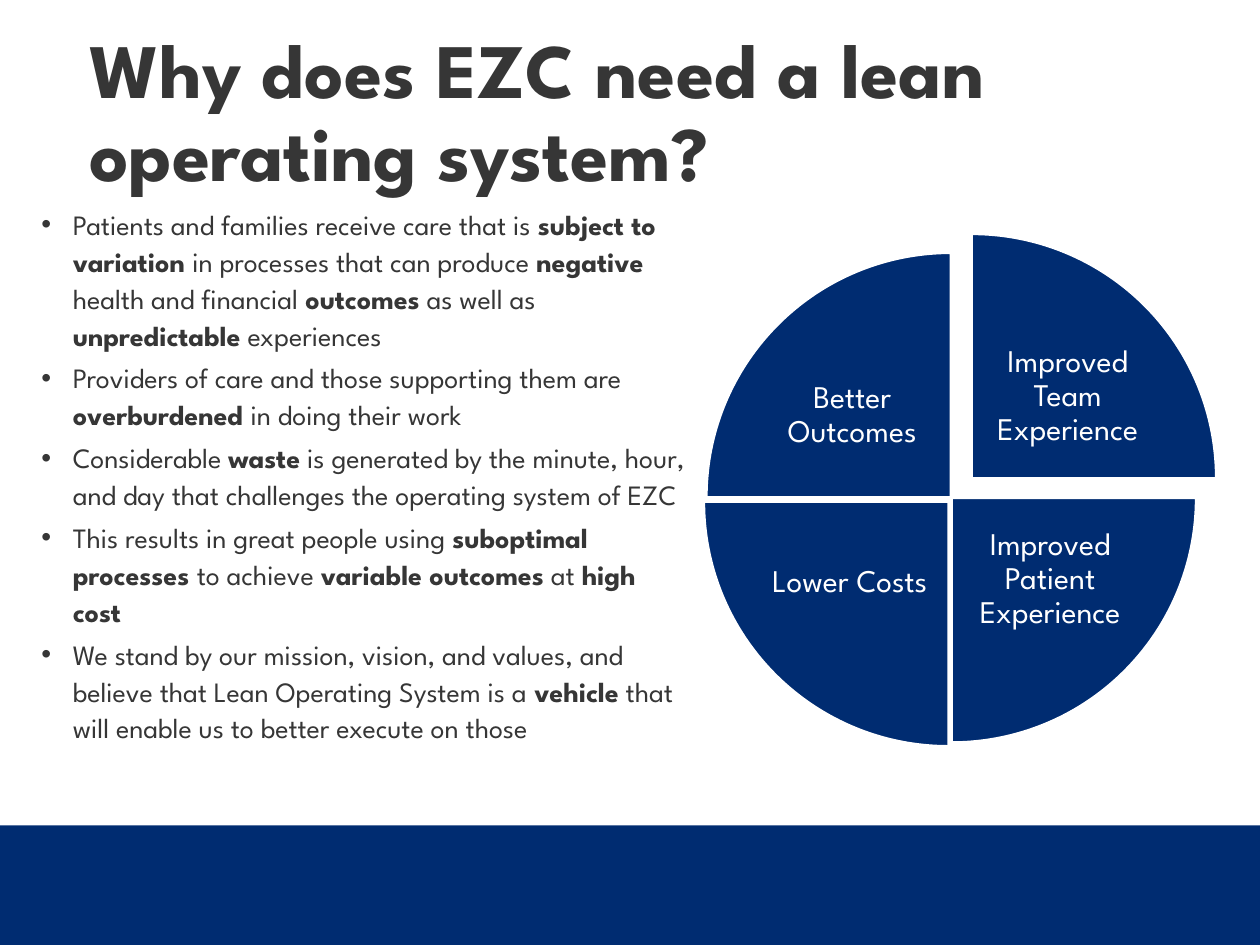
import pptx
import pptx.util
import pptx.dml.color
import pptx.enum.shapes
import pptx.enum.text
import pptx.oxml.ns
import lxml.etree

Inches = pptx.util.Inches
SHAPE = pptx.enum.shapes.MSO_SHAPE
ALIGN = pptx.enum.text.PP_ALIGN
ANCHOR = pptx.enum.text.MSO_ANCHOR
NAVY = pptx.dml.color.RGBColor(0x00, 0x2C, 0x71)
CHARCOAL = pptx.dml.color.RGBColor(0x36, 0x36, 0x36)
WHITE = pptx.dml.color.RGBColor(0xFF, 0xFF, 0xFF)

TITLE = "Why does EZC need a lean operating system?"

REGULAR_THEN_BOLD_REASONS = [
    ["Patients and families receive care that is ", "subject to variation ",
     "in processes that can produce ", "negative ", "health and financial ",
     "outcomes", " as well as ", "unpredictable", " experiences"],
    ["Providers of care and those supporting them are", " overburdened ",
     "in doing their work"],
    ["Considerable ", "waste",
     " is generated by the minute, hour, and day that challenges the operating system of EZC"],
    ["This results in great people using ", "suboptimal processes ",
     "to achieve ", "variable outcomes", " at ", "high cost"],
    ["We stand by our mission, vision, and values, and believe that Lean Operating System is a ",
     "vehicle", " that will enable us to better execute on those"],
]

PIE_SIZE = 3.87
LABEL_SIZE = (1.43, 1.15)
QUARTERS = [
    ("Improved Team Experience", (5.78, 1.86), 270, (7.76, 2.57)),
    ("Improved Patient Experience", (5.62, 2.02), 0, (7.62, 4.02)),
    ("Lower Costs", (5.59, 2.05), 90, (6.03, 4.05)),
    ("Better Outcomes", (5.61, 2.01), 180, (6.05, 2.72)),
]


class SlideBuilder:
    font_name = "League Spartan"
    bullet_font = "Arial"

    def __init__(self, slide):
        self.slide = slide

    def shape(self, kind, left, top, width, height):
        shape = self.slide.shapes.add_shape(
            kind, Inches(left), Inches(top), Inches(width), Inches(height))
        shape.shadow.inherit = False
        shape.fill.solid()
        shape.fill.fore_color.rgb = NAVY
        return shape

    def band(self, left, top, width, height):
        self.shape(SHAPE.RECTANGLE, left, top, width, height).line.fill.background()

    def quarter(self, left, top, start):
        pie = self.shape(SHAPE.PIE, left, top, PIE_SIZE, PIE_SIZE)
        pie.adjustments[0] = start * 0.6
        pie.adjustments[1] = (start + 90) % 360 * 0.6
        pie.line.color.rgb = WHITE
        pie.line.width = pptx.util.Pt(1)

    def frame(self, left, top, width, height, anchor=ANCHOR.MIDDLE):
        frame = self.slide.shapes.add_textbox(
            Inches(left), Inches(top), Inches(width), Inches(height)).text_frame
        frame.word_wrap = True
        frame.vertical_anchor = anchor
        return frame

    def run(self, paragraph, text, size, color, bold=False):
        run = paragraph.add_run()
        run.text = text
        run.font.name = self.font_name
        run.font.size = pptx.util.Pt(size)
        run.font.bold = bold
        run.font.color.rgb = color

    def title(self, text, *box):
        heading = self.frame(*box).paragraphs[0]
        heading.line_spacing = 0.9
        self.run(heading, text, 44, CHARCOAL, True)

    def label(self, text, *box):
        frame = self.frame(*box)
        frame.margin_left = frame.margin_right = Inches(0.03)
        frame.margin_top = frame.margin_bottom = Inches(0.03)
        caption = frame.paragraphs[0]
        caption.alignment = ALIGN.CENTER
        caption.line_spacing = 0.9
        self.run(caption, text, 18, WHITE)

    def bullets(self, items, *box):
        frame = self.frame(*box, anchor=ANCHOR.TOP)
        for index, texts in enumerate(items):
            reason = frame.add_paragraph() if index else frame.paragraphs[0]
            properties = reason._p.get_or_add_pPr()
            properties.set("marL", str(Inches(0.25)))
            properties.set("indent", str(Inches(-0.25)))
            for tag, attribute, value in (("a:buFont", "typeface", self.bullet_font),
                                          ("a:buChar", "char", "•")):
                lxml.etree.SubElement(properties, pptx.oxml.ns.qn(tag)).set(attribute, value)
            reason.line_spacing = 1.1
            if index:
                reason.space_before = pptx.util.Pt(3.4)
            for position, text in enumerate(texts):
                self.run(reason, text, 16, CHARCOAL, position % 2 == 1)


def main():
    deck = pptx.Presentation()
    deck.slide_width = Inches(10)
    deck.slide_height = Inches(7.5)
    builder = SlideBuilder(deck.slides.add_slide(deck.slide_layouts[6]))
    builder.band(0, 6.55, 10, 0.95)
    builder.title(TITLE, 0.61, 0.19, 8.62, 1.45)
    builder.bullets(REGULAR_THEN_BOLD_REASONS, 0.23, 1.57, 5.33, 5.31)
    for text, pie_corner, start, label_corner in QUARTERS:
        builder.quarter(*pie_corner, start)
        builder.label(text, *label_corner, *LABEL_SIZE)
    deck.save("out.pptx")


if __name__ == "__main__":
    main()
